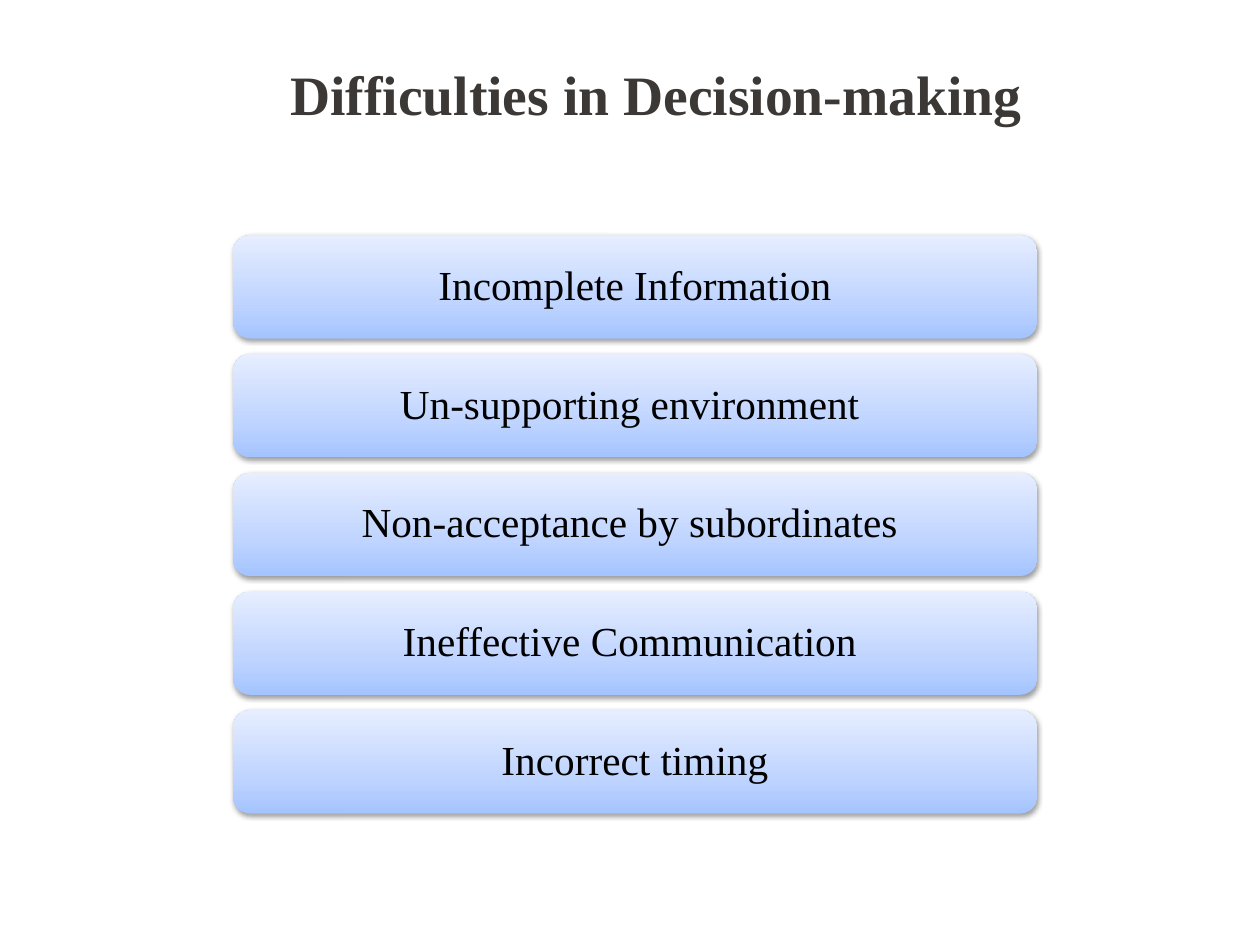
from lxml import etree
from pptx import Presentation
from pptx.dml.color import RGBColor
from pptx.enum.shapes import MSO_SHAPE
from pptx.enum.text import MSO_ANCHOR, PP_ALIGN
from pptx.oxml import parse_xml
from pptx.oxml.ns import nsdecls, qn
from pptx.util import Inches, Pt

SLIDE_W, SLIDE_H = 11.03, 8.27
FONT = "Times New Roman"
TITLE_COLOR = RGBColor(0x3B, 0x38, 0x35)
BLACK = RGBColor(0x00, 0x00, 0x00)
# Bar gradient, from the bottom edge to the top: (percent, colour)
BAR_STOPS = [
    (0, RGBColor(0xA4, 0xC4, 0xFF)),
    (35, RGBColor(0xBF, 0xD4, 0xFF)),
    (100, RGBColor(0xE6, 0xEE, 0xFF)),
]
DIFFICULTIES = [
    "Incomplete Information",
    "Un-supporting environment ",
    "Non-acceptance by subordinates ",
    "Ineffective Communication ",
    "Incorrect timing",
]


def write_text(tf, text, size, color, bold=False, align=PP_ALIGN.LEFT,
               spacing=1.0, wrap=True):
    tf.word_wrap = wrap
    tf.vertical_anchor = MSO_ANCHOR.MIDDLE
    p = tf.paragraphs[0]
    p.alignment = align
    p.line_spacing = spacing
    p.space_before = Pt(0)
    r = p.add_run()
    r.text = text
    r.font.name = FONT
    r.font.size = Pt(size)
    r.font.bold = bold
    r.font.color.rgb = color


def style_bar(sp):
    # Three-stop gradient
    stops = "".join(
        f'<a:gs pos="{pos * 1000}"><a:srgbClr val="{color}"/></a:gs>'
        for pos, color in BAR_STOPS)
    sp_pr = sp._element.spPr
    sp_pr.append(parse_xml(
        f'<a:gradFill {nsdecls("a")} rotWithShape="1"><a:gsLst>{stops}</a:gsLst>'
        '<a:lin ang="16200000" scaled="0"/></a:gradFill>'))
    sp.line.fill.background()
    # Soft shadow below the bar
    sp.shadow.inherit = False
    shadow = etree.SubElement(
        sp_pr.find(qn("a:effectLst")), qn("a:outerShdw"),
        blurRad=str(Pt(3.1)), dist=str(Pt(1.6)), dir="5400000", rotWithShape="0")
    color = etree.SubElement(shadow, qn("a:srgbClr"), val=str(BLACK))
    etree.SubElement(color, qn("a:alpha"), val="38000")


def add_title(slide, text, left, top, width, height):
    title = slide.shapes.title
    title.left, title.top = Inches(left), Inches(top)
    title.width, title.height = Inches(width), Inches(height)
    write_text(title.text_frame, text, 35, TITLE_COLOR, bold=True, wrap=False)


def add_bars(slide, labels, left, top, width, height, gap_share=0.15):
    # Equal bars, with gaps as a share of the bar height
    bar_h = height / (len(labels) + gap_share * (len(labels) - 1))
    step = bar_h * (1 + gap_share)
    for row, label in enumerate(labels):
        sp = slide.shapes.add_shape(
            MSO_SHAPE.ROUNDED_RECTANGLE, Inches(left), Inches(top + row * step),
            Inches(width), Inches(bar_h))
        style_bar(sp)
        write_text(sp.text_frame, label, 26, BLACK, align=PP_ALIGN.CENTER,
                   spacing=0.9)


def main():
    prs = Presentation()
    prs.slide_width, prs.slide_height = Inches(SLIDE_W), Inches(SLIDE_H)
    slide = prs.slides.add_slide(prs.slide_layouts[5])
    add_title(slide, "Difficulties in Decision-making",
              2.44, 0.47, 6.79, 0.69)
    add_bars(slide, DIFFICULTIES, 2.04, 2.06, 7.04, 5.06)
    prs.save("out.pptx")


if __name__ == "__main__":
    main()
